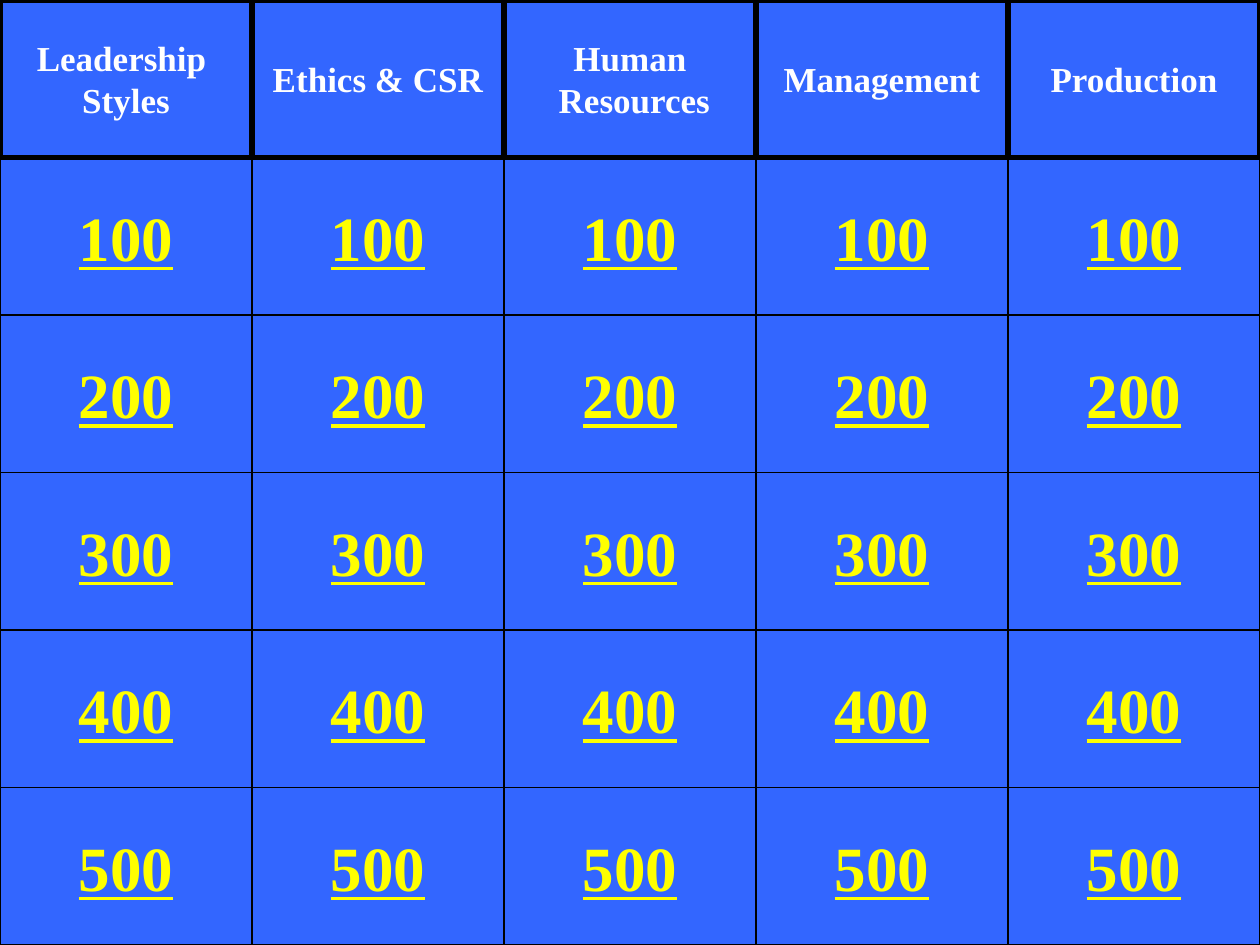
from dataclasses import dataclass

from pptx import Presentation
from pptx.dml.color import RGBColor
from pptx.enum import shapes, text
from pptx.util import Inches, Pt

BLUE, BLACK, WHITE, YELLOW = "3366FF", "000000", "FFFFFF", "FFFF00"
FONT = "Times New Roman"
WIDTH, HEIGHT = Inches(10), Inches(7.5)
CATEGORIES = [
    ["Leadership ", "Styles"],
    ["Ethics & CSR"],
    ["Human", " Resources"],
    ["Management"],
    ["Production"],
]
POINTS = [100, 200, 300, 400, 500]
CELL_W = WIDTH // len(CATEGORIES)
CELL_H = HEIGHT // (len(POINTS) + 1)


@dataclass
class CellStyle:
    kind: shapes.MSO_SHAPE
    border: float
    size: int
    color: str
    underline: bool


HEADER = CellStyle(shapes.MSO_SHAPE.RECTANGLE, 3, 20, WHITE, False)
BUTTON = CellStyle(shapes.MSO_SHAPE.ACTION_BUTTON_CUSTOM, 0.75, 36, YELLOW, True)


def rgb(value: str) -> RGBColor:
    return RGBColor.from_string(value)


def write(tf, lines: list[str], *, size: int, color: str, underline: bool) -> None:
    tf.word_wrap = False
    tf.vertical_anchor = text.MSO_ANCHOR.MIDDLE
    for i, line in enumerate(lines):
        p = tf.add_paragraph() if i else tf.paragraphs[0]
        p.alignment = text.PP_ALIGN.CENTER
        r = p.add_run()
        r.text = line
        r.font.name = FONT
        r.font.size = Pt(size)
        r.font.bold = True
        r.font.underline = underline
        r.font.color.rgb = rgb(color)


def add_cell(s, col: int, row: int, lines: list[str], style: CellStyle) -> None:
    sp = s.shapes.add_shape(style.kind, col * CELL_W, row * CELL_H, CELL_W, CELL_H)
    sp.shadow.inherit = False
    sp.fill.solid()
    sp.fill.fore_color.rgb = rgb(BLUE)
    sp.line.color.rgb = rgb(BLACK)
    sp.line.width = Pt(style.border)
    write(sp.text_frame, lines, size=style.size, color=style.color,
          underline=style.underline)


def main() -> None:
    prs = Presentation()
    prs.slide_width, prs.slide_height = WIDTH, HEIGHT
    s = prs.slides.add_slide(prs.slide_layouts[6])
    s.background.fill.solid()
    s.background.fill.fore_color.rgb = rgb(BLUE)
    for col in range(len(CATEGORIES)):
        for row, points in enumerate(POINTS, start=1):
            add_cell(s, col, row, [str(points)], BUTTON)
    for col, lines in enumerate(CATEGORIES):
        add_cell(s, col, 0, lines, HEADER)
    prs.save("out.pptx")


if __name__ == "__main__":
    main()
